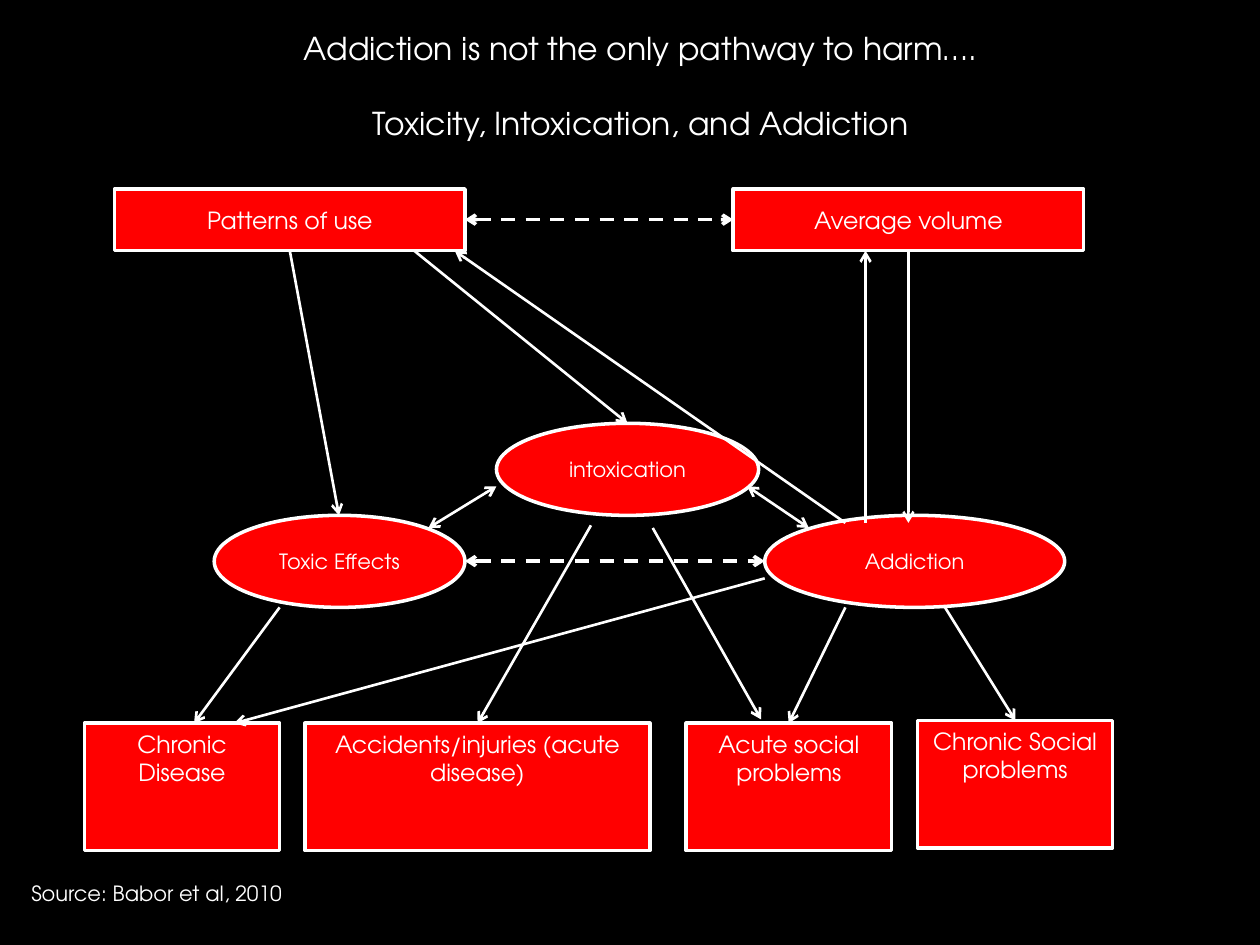
from lxml import etree
from pptx import Presentation
from pptx.dml.color import RGBColor
from pptx.enum import dml, shapes, text
from pptx.oxml import ns
from pptx.util import Pt

COLORS = {"back": "000000", "fill": "FF0000", "ink": "FFFFFF"}
FONT = "TeX Gyre Adventor"
RECT, OVAL = shapes.MSO_SHAPE.RECTANGLE, shapes.MSO_SHAPE.OVAL
TOP, MIDDLE = text.MSO_ANCHOR.TOP, text.MSO_ANCHOR.MIDDLE
LEFT, CENTER = text.PP_ALIGN.LEFT, text.PP_ALIGN.CENTER


def rgb(name):
    return RGBColor.from_string(COLORS[name])


class Diagram:
    """Holds the style and the slide being drawn; lengths are points."""

    def __init__(self, slide):
        self.s = slide
        fill = slide.background.fill
        fill.solid()
        fill.fore_color.rgb = rgb("back")

    def set_text(self, tf, lines, size, align, gap=0):
        tf.text = "\n".join(lines)
        for i, p in enumerate(tf.paragraphs):
            p.alignment = align
            if i:
                p.space_before = Pt(gap)
            for r in p.runs:
                r.font.name = FONT
                r.font.size = Pt(size)
                r.font.color.rgb = rgb("ink")

    def node(self, kind, label, box, size, anchor=MIDDLE):
        sp = self.s.shapes.add_shape(kind, *map(Pt, box))
        sp.shadow.inherit = False
        sp.fill.solid()
        sp.fill.fore_color.rgb = rgb("fill")
        sp.line.color.rgb = rgb("ink")
        sp.line.width = Pt(2)
        tf = sp.text_frame
        tf.word_wrap = True
        tf.vertical_anchor = anchor
        self.set_text(tf, [label], size, CENTER)

    def arrow(self, start, end, both=False, dashed=False):
        ends = [Pt(v) for v in (*start, *end)]
        c = self.s.shapes.add_connector(shapes.MSO_CONNECTOR.STRAIGHT, *ends)
        c.line.color.rgb = rgb("ink")
        c.line.width = Pt(2 if dashed else 1.5)
        if dashed:
            c.line.dash_style = dml.MSO_LINE.DASH
        ln = c._element.spPr.find(ns.qn("a:ln"))
        for tag in ("a:headEnd", "a:tailEnd") if both else ("a:tailEnd",):
            etree.SubElement(ln, ns.qn(tag), type="arrow")
        etree.SubElement(c._element.spPr, ns.qn("a:effectLst"))

    def label(self, lines, box, size, align=LEFT, gap=0, wrap=True, inset=(7.2, 3.6)):
        tf = self.s.shapes.add_textbox(*map(Pt, box)).text_frame
        tf.word_wrap = wrap
        tf.margin_left = tf.margin_right = Pt(inset[0])
        tf.margin_top = tf.margin_bottom = Pt(inset[1])
        self.set_text(tf, lines, size, align, gap)


def main():
    prs = Presentation()
    prs.slide_width, prs.slide_height = Pt(720), Pt(540)
    d = Diagram(prs.slides.add_slide(prs.slide_layouts[6]))

    use_y, use_w, use_h = 108, 200.2, 35.3
    use_bottom = use_y + use_h
    oval_h, upper_y, lower_y = 52.6, 241.9, 294.5
    lower_bottom = lower_y + oval_h
    harm_y, harm_h = 413.3, 72.7
    social_y = 411.8
    addiction_top = 298.8

    for label, x, y, w in [
        ("Toxic Effects", 122.4, lower_y, 143.3),
        ("intoxication", 283.7, upper_y, 149.8),
        ("Addiction", 437, lower_y, 171.4),
    ]:
        d.node(OVAL, label, (x, y, w, oval_h), 12)

    for label, x, y, w in [
        ("Chronic Disease", 48.2, harm_y, 111.6),
        ("Accidents/injuries (acute disease)", 174.2, harm_y, 197.3),
        ("Acute social problems", 392.1, harm_y, 117.4),
        ("Chronic Social problems", 524.2, social_y, 111.6),
    ]:
        d.node(RECT, label, (x, y, w, harm_h), 13.5, TOP)

    for label, x in [("Patterns of use", 65.5), ("Average volume", 419)]:
        d.node(RECT, label, (x, use_y, use_w, use_h), 13.5)

    for y, right in [(125.5, 419), (320.6, 437)]:
        d.arrow((265.7, y), (right, y), both=True, dashed=True)

    for start, end in [
        ((244.8, 301.7), (283.7, 277.9)),
        ((427, 277.9), (462.2, 301.7)),
    ]:
        d.arrow(start, end, both=True)

    for start, end in [
        # between use and effects
        ((165.6, use_bottom), (193.7, lower_y)),
        ((519.1, use_bottom), (519.1, addiction_top)),
        ((494.6, addiction_top), (494.6, use_bottom)),
        ((236.7, use_bottom), (358.6, upper_y)),
        ((483.1, addiction_top), (259.9, use_bottom)),
        # from effects to harms
        ((437, 330.5), (133.9, harm_y)),
        ((483.1, lower_bottom), (450.7, harm_y)),
        ((540, lower_bottom), (580.3, social_y)),
        ((159.8, lower_bottom), (110.9, harm_y)),
        ((337.7, 300.2), (272.9, harm_y)),
        ((373, 301.7), (434.9, 411.1)),
    ]:
        d.arrow(start, end)

    d.label(
        ["Addiction is not the only pathway to harm….",
         "Toxicity, Intoxication, and Addiction"],
        (65.5, 13.7, 601.2, 49.7), 18, CENTER, gap=21.4, inset=(5, 2.9),
    )
    d.label(["Source: Babor et al, 2010"], (10.8, 499.7, 159.8, 21.6), 12, wrap=False)
    prs.save("out.pptx")


if __name__ == "__main__":
    main()
